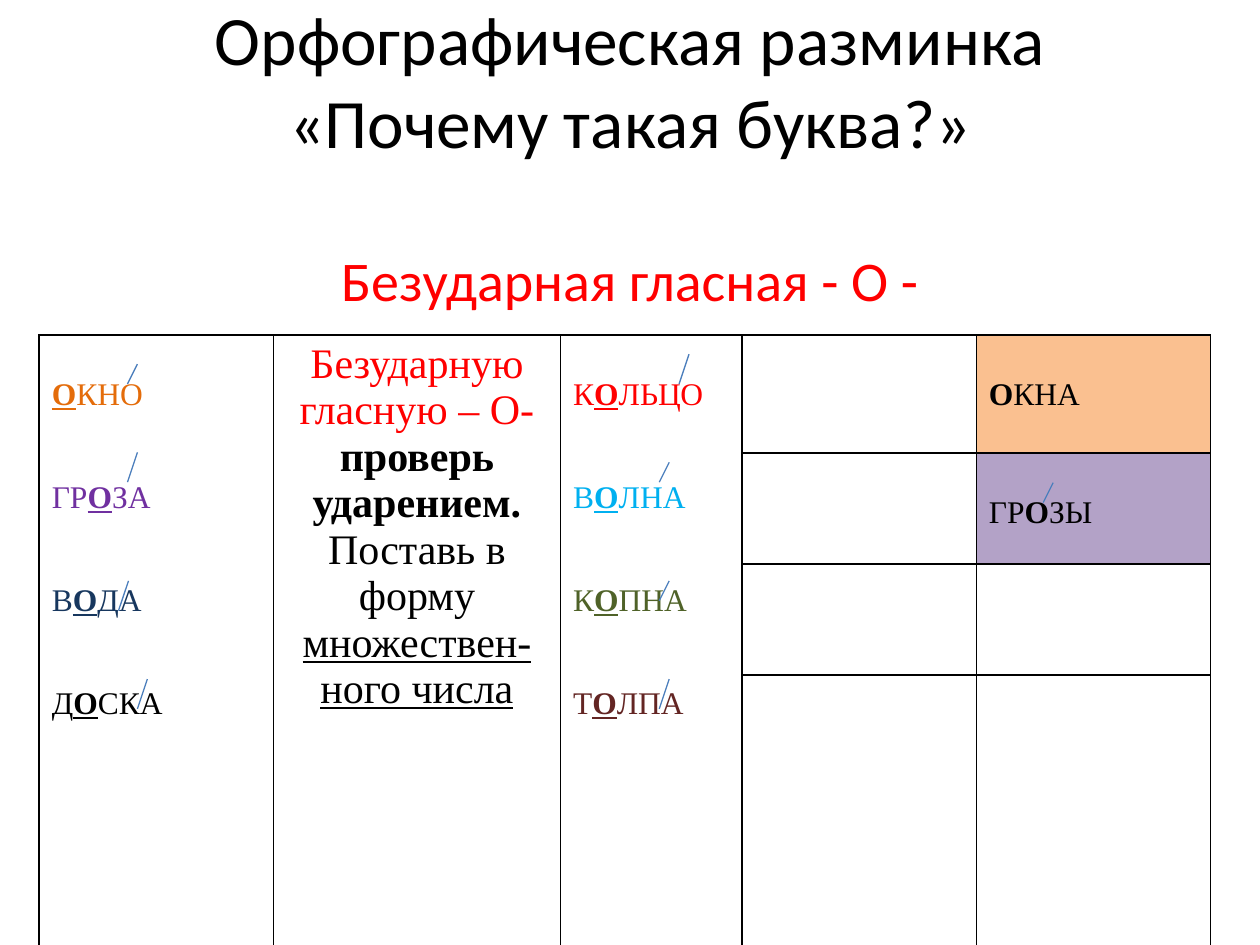
from dataclasses import dataclass

from lxml import etree
from pptx import Presentation
from pptx.dml.color import RGBColor
from pptx.enum.shapes import MSO_CONNECTOR
from pptx.enum.text import MSO_ANCHOR, PP_ALIGN
from pptx.oxml.ns import qn
from pptx.util import Cm, Pt

STRAIGHT = MSO_CONNECTOR.STRAIGHT
CENTER = PP_ALIGN.CENTER
MIDDLE = MSO_ANCHOR.MIDDLE


@dataclass(frozen=True)
class Theme:
    heading_font: str = "Calibri"
    table_font: str = "Times New Roman"
    black: str = "000000"
    red: str = "FF0000"
    accent: str = "4B7EBC"
    title_size: float = 39.6
    subtitle_size: float = 32
    rule_size: float = 24
    word_size: float = 18
    border_width: float = 1
    accent_width: float = 0.75


THEME = Theme()


@dataclass(frozen=True)
class Word:
    """A word split around its unstressed vowel."""
    start: str
    end: str
    color: str = THEME.black
    vowel: str = "О"


@dataclass(frozen=True)
class Accent:
    """A stress mark: its top point and height, in centimetres."""
    x: float
    y: float
    height: float


@dataclass(frozen=True)
class RulePart:
    text: str
    color: str = THEME.black
    bold: bool = False
    underline: bool = False


COLUMN_WIDTHS = (4.72, 5.79, 3.66, 4.72, 4.72)
ROW_HEIGHTS = (2.38, 2.24, 2.24, 5.6)
ACCENT_RUN = 0.2

LEFT_WORDS = (
    Word("", "КНО", "E46C0A"),
    Word("ГР", "ЗА", "7030A0"),
    Word("В", "ДА", "17375E"),
    Word("Д", "СКА"),
)
RIGHT_WORDS = (
    Word("К", "ЛЬЦО", THEME.red),
    Word("В", "ЛНА", "00B0F0"),
    Word("К", "ПНА", "4F6228"),
    Word("Т", "ЛПА", "632523"),
)
ANSWERS = ((Word("", "КНА"), "FAC090"), (Word("ГР", "ЗЫ"), "B3A2C7"))
RULE = (
    RulePart("Безударную гласную – О- ", THEME.red),
    RulePart("проверь ударением. ", bold=True),
    RulePart("Поставь в форму "),
    RulePart("множествен- ного числа", underline=True),
)
ACCENTS = (
    Accent(2.77, 7.34, 0.4), Accent(2.77, 9.12, 0.6),
    Accent(2.59, 11.71, 0.6), Accent(2.97, 13.69, 0.6),
    Accent(13.89, 7.14, 0.6), Accent(13.49, 9.32, 0.4),
    Accent(13.49, 11.71, 0.4), Accent(13.49, 13.69, 0.6),
    Accent(21.23, 9.73, 0.4),
)


def format_run(run, font: str, size: float, color: str,
               bold: bool = False, underline: bool = False) -> None:
    run.font.name = font
    run.font.size = Pt(size)
    run.font.color.rgb = RGBColor.from_string(color)
    run.font.bold = bold
    run.font.underline = underline


def write_heading(text_frame, text: str, size: float, color: str) -> None:
    text_frame.word_wrap = True
    text_frame.text = text
    paragraph = text_frame.paragraphs[0]
    paragraph.alignment = CENTER
    for run in paragraph.runs:
        format_run(run, THEME.heading_font, size, color)


def write_words(cell, words: tuple[Word, ...], underline: bool) -> None:
    cell.margin_top = Cm(0.85)
    for index, word in enumerate(words):
        if index == 0:
            paragraph = cell.text_frame.paragraphs[0]
        else:
            paragraph = cell.text_frame.add_paragraph()
            paragraph.space_before = Pt(39)
        for text, marked in ((word.start, False), (word.vowel, True), (word.end, False)):
            if text:
                run = paragraph.add_run()
                run.text = text
                format_run(run, THEME.table_font, THEME.word_size, word.color,
                           marked, marked and underline)


def write_rule(cell) -> None:
    paragraph = cell.text_frame.paragraphs[0]
    paragraph.alignment = CENTER
    for part in RULE:
        run = paragraph.add_run()
        run.text = part.text
        format_run(run, THEME.table_font, THEME.rule_size, part.color,
                   part.bold, part.underline)


def style_cell(cell) -> None:
    properties = cell._tc.get_or_add_tcPr()
    for side in ("lnL", "lnR", "lnT", "lnB"):
        line = etree.SubElement(properties, qn(f"a:{side}"), w=str(Pt(THEME.border_width)))
        fill = etree.SubElement(line, qn("a:solidFill"))
        etree.SubElement(fill, qn("a:srgbClr"), val=THEME.black)
    cell.fill.background()


def add_word_table(slide) -> None:
    shape = slide.shapes.add_table(
        len(ROW_HEIGHTS), len(COLUMN_WIDTHS), Cm(0.79), Cm(6.75),
        Cm(sum(COLUMN_WIDTHS)), Cm(sum(ROW_HEIGHTS)))
    table = shape.table
    table.first_row = False
    table.horz_banding = False
    for column, width in zip(table.columns, COLUMN_WIDTHS):
        column.width = Cm(width)
    for row, height in zip(table.rows, ROW_HEIGHTS):
        row.height = Cm(height)
    for cell in table.iter_cells():
        style_cell(cell)

    # The first three columns each run the full height
    for column in range(3):
        table.cell(0, column).merge(table.cell(len(ROW_HEIGHTS) - 1, column))
    write_words(table.cell(0, 0), LEFT_WORDS, underline=True)
    write_rule(table.cell(0, 1))
    write_words(table.cell(0, 2), RIGHT_WORDS, underline=True)

    # Plural forms on coloured cells
    for row, (word, color) in enumerate(ANSWERS):
        cell = table.cell(row, 4)
        write_words(cell, (word,), underline=False)
        cell.fill.solid()
        cell.fill.fore_color.rgb = RGBColor.from_string(color)


def add_accent(slide, accent: Accent) -> None:
    connector = slide.shapes.add_connector(
        STRAIGHT, Cm(accent.x), Cm(accent.y),
        Cm(accent.x - ACCENT_RUN), Cm(accent.y + accent.height))
    connector.line.color.rgb = RGBColor.from_string(THEME.accent)
    connector.line.width = Pt(THEME.accent_width)
    etree.SubElement(connector._element.spPr, qn("a:effectLst"))


def main() -> None:
    presentation = Presentation()
    presentation.slide_width = Cm(25.4)
    presentation.slide_height = Cm(19.05)
    slide = presentation.slides.add_slide(presentation.slide_layouts[5])

    # Title
    title = slide.shapes.title
    title.left, title.top, title.width, title.height = Cm(1.9), Cm(0.79), Cm(21.6), Cm(1.6)
    title.text_frame.vertical_anchor = MIDDLE
    write_heading(title.text_frame, "Орфографическая разминка\v«Почему такая буква?»",
                  THEME.title_size, THEME.black)

    # Subtitle
    subtitle = slide.shapes.add_textbox(Cm(3.81), Cm(4.75), Cm(17.78), Cm(10.9))
    subtitle.text_frame.margin_top = Cm(0.2)
    write_heading(subtitle.text_frame, "Безударная гласная - О -",
                  THEME.subtitle_size, THEME.red)

    # Table and the stress marks over its words
    add_word_table(slide)
    for accent in ACCENTS:
        add_accent(slide, accent)

    presentation.save("out.pptx")


if __name__ == "__main__":
    main()
